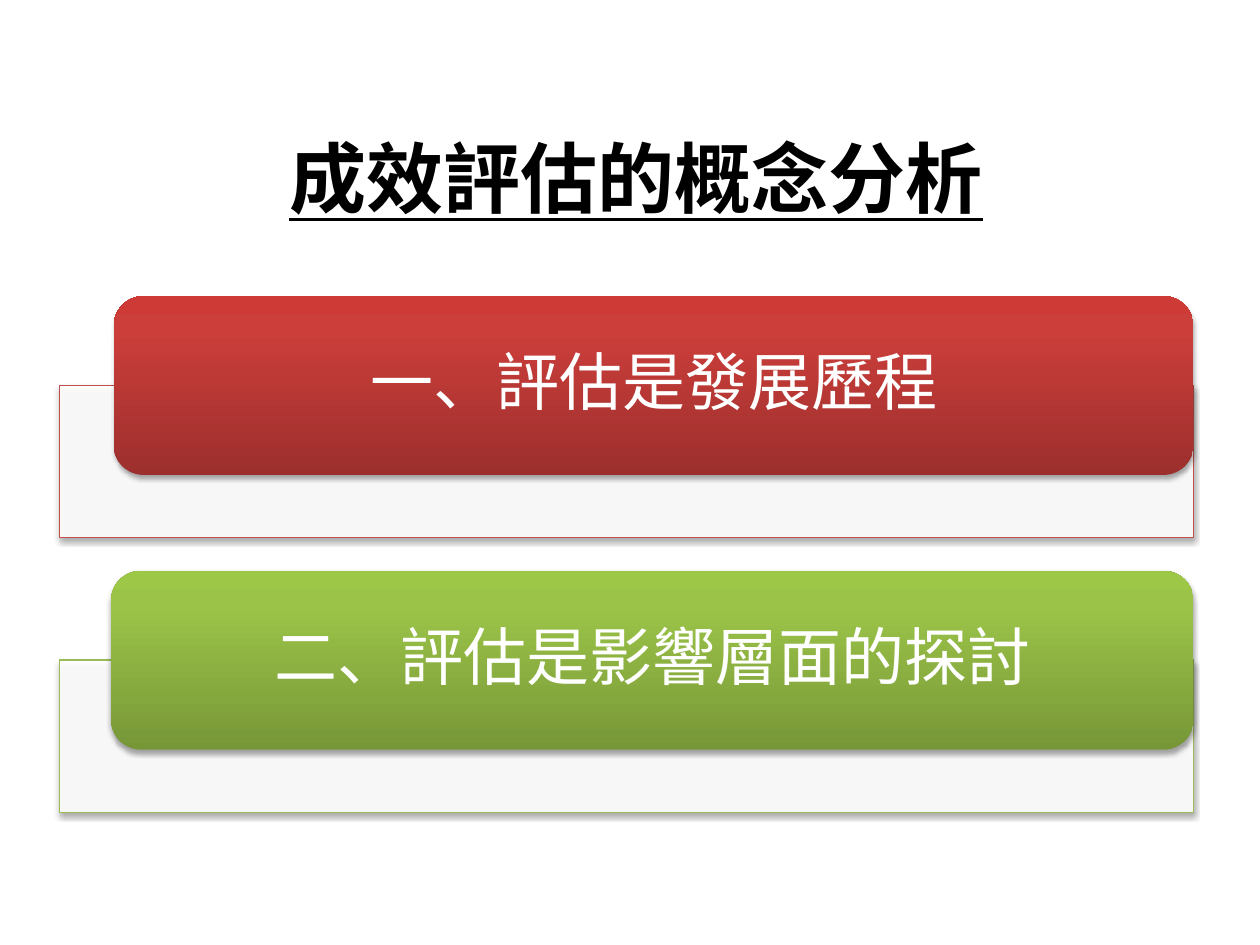
from copy import deepcopy
from dataclasses import dataclass

from lxml.etree import SubElement
from pptx import Presentation
from pptx.dml.color import RGBColor as Rgb
from pptx.enum.shapes import MSO_SHAPE as Shape
from pptx.enum.text import MSO_ANCHOR as Anchor, PP_ALIGN as Align
from pptx.oxml.ns import qn
from pptx.util import Pt


@dataclass(frozen=True)
class Theme:
    title_font: str = "Noto Sans CJK SC"
    bar_font: str = "Calibri"
    east_asian_font: str = "Noto Sans CJK SC"
    title_size: float = 44
    bar_size: float = 36
    title_ink: str = "000000"
    bar_ink: str = "FFFFFF"
    panel: str = "FFFFFF"
    panel_opacity: int = 90
    shadow: str = "000000"
    shadow_opacity: int = 35
    red: tuple = ("C0504D", "9C2F2D", "CB3E3A", "CE3B37")
    green: tuple = ("9BBB59", "779737", "9BC348", "9DC746")


@dataclass(frozen=True)
class Box:
    left: float
    top: float
    width: float
    height: float

    def lengths(self):
        return [Pt(side) for side in (self.left, self.top, self.width, self.height)]


THEME = Theme()
TITLE = "成效評估的概念分析"
CONCEPTS = [
    ("一、評估是發展歷程", THEME.red, 31),
    ("二、評估是影響層面的探討", THEME.green, 29.5),
]
TITLE_BOX = Box(39.6, 56.2, 648, 90)
CONCEPT_BOX = Box(34, 169.2, 648, 138)
CONCEPT_PITCH = 157
BAR_HEIGHT = 102.2
PANEL_DROP = 51
STOP_POSITIONS = (0, 0.8, 1)


def apply(target, **values):
    for name, value in values.items():
        setattr(target, name, value)


def set_opacity(color, percent):
    SubElement(color, qn("a:alpha"), val=str(percent * 1000))


def add_shadow(shape):
    shape.shadow.inherit = False
    effects = shape._element.spPr.find(qn("a:effectLst"))
    outer = SubElement(effects, qn("a:outerShdw"), blurRad=str(Pt(3.1)),
                       dist=str(Pt(1.8)), dir="5400000", rotWithShape="0")
    color = SubElement(outer, qn("a:srgbClr"), val=THEME.shadow)
    set_opacity(color, THEME.shadow_opacity)


def fill_gradient(shape, colors):
    shape.fill.gradient()
    shape.fill.gradient_angle = 90
    stop_list = shape._element.spPr.find(".//" + qn("a:gsLst"))
    stop_list.append(deepcopy(stop_list[0]))
    for stop, position, color in zip(shape.fill.gradient_stops, STOP_POSITIONS, colors):
        stop.position = position
        stop.color.rgb = Rgb.from_string(color)


def write(frame, text, ink, frame_format, font_format, line_spacing=1.0):
    apply(frame, vertical_anchor=Anchor.MIDDLE, word_wrap=True, **frame_format)
    paragraph = frame.paragraphs[0]
    apply(paragraph, alignment=Align.CENTER, line_spacing=line_spacing)
    run = paragraph.add_run()
    run.text = text
    apply(run.font, **font_format)
    run.font.color.rgb = Rgb.from_string(ink)
    SubElement(run._r.get_or_add_rPr(), qn("a:ea"), typeface=THEME.east_asian_font)


def place_title(slide, box):
    title = slide.shapes.title
    apply(title, **dict(zip(("left", "top", "width", "height"), box.lengths())))
    write(title.text_frame, TITLE, THEME.title_ink, {},
          dict(name=THEME.title_font, size=Pt(THEME.title_size), bold=True, underline=True))


def place_concept(shapes, box, text, colors, indent):
    outline, *gradient = colors
    panel_box = Box(box.left, box.top + PANEL_DROP, box.width, box.height - PANEL_DROP)
    panel = shapes.add_shape(Shape.RECTANGLE, *panel_box.lengths())
    panel.fill.solid()
    panel.fill.fore_color.rgb = Rgb.from_string(THEME.panel)
    set_opacity(panel._element.spPr.find(".//" + qn("a:srgbClr")), THEME.panel_opacity)
    panel.line.color.rgb = Rgb.from_string(outline)
    panel.line.width = Pt(0.75)
    add_shadow(panel)

    bar_box = Box(box.left + indent, box.top, box.width - indent, BAR_HEIGHT)
    bar = shapes.add_shape(Shape.ROUNDED_RECTANGLE, *bar_box.lengths())
    fill_gradient(bar, gradient)
    bar.line.fill.background()
    add_shadow(bar)
    write(bar.text_frame, text, THEME.bar_ink,
          dict(margin_left=Pt(17), margin_right=Pt(17), margin_top=0, margin_bottom=0),
          dict(name=THEME.bar_font, size=Pt(THEME.bar_size)), line_spacing=0.9)


def main():
    deck = Presentation()
    apply(deck, slide_width=Pt(720), slide_height=Pt(540))
    slide = deck.slides.add_slide(deck.slide_layouts[5])
    place_title(slide, TITLE_BOX)
    concepts = slide.shapes.add_group_shape().shapes
    for row, (text, colors, indent) in enumerate(CONCEPTS):
        box = Box(CONCEPT_BOX.left, CONCEPT_BOX.top + row * CONCEPT_PITCH,
                  CONCEPT_BOX.width, CONCEPT_BOX.height)
        place_concept(concepts, box, text, colors, indent)
    deck.save("out.pptx")


if __name__ == "__main__":
    main()
